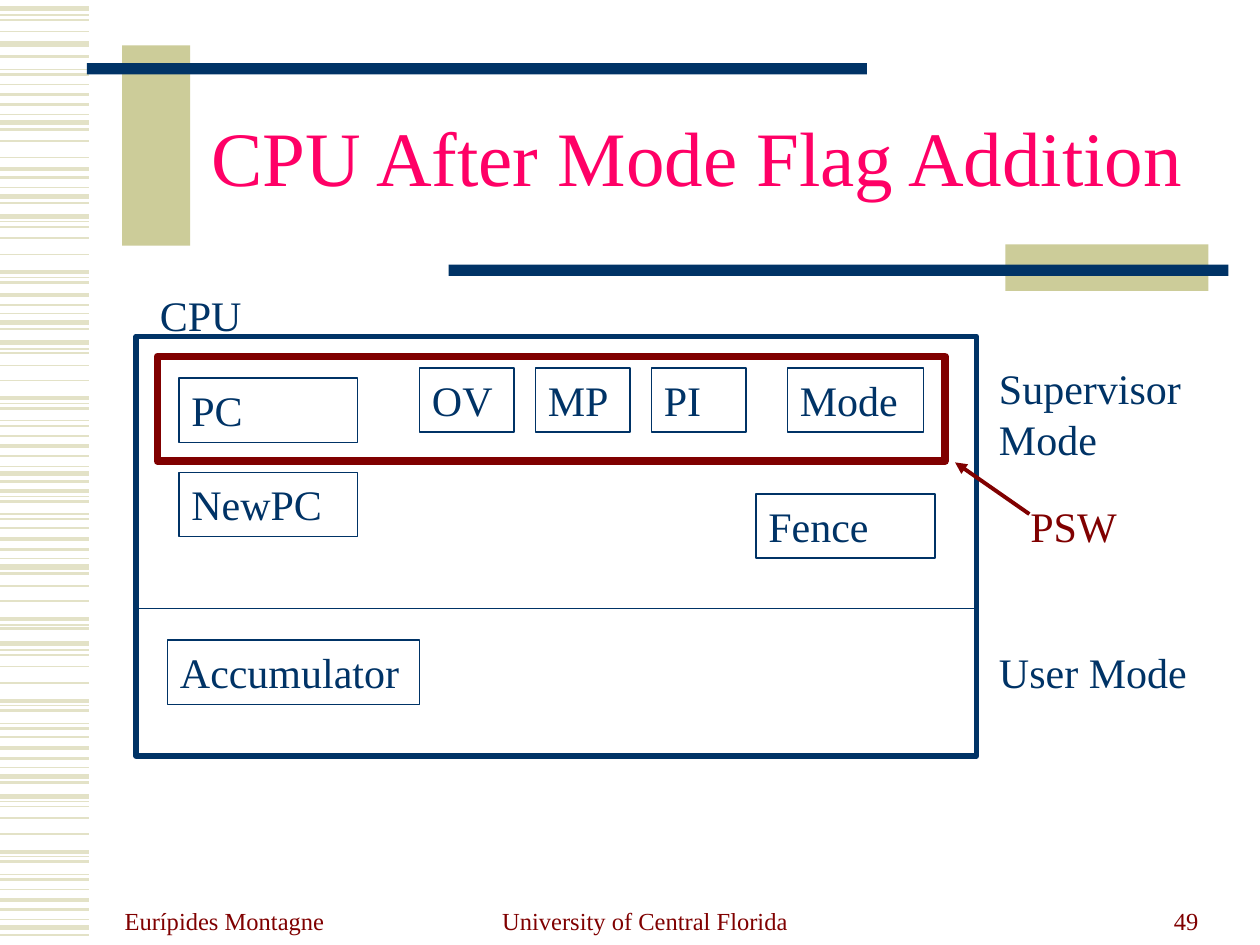
from lxml import etree
from pptx import Presentation
from pptx.dml.color import RGBColor
from pptx.enum.shapes import MSO_CONNECTOR, MSO_SHAPE
from pptx.enum.text import MSO_ANCHOR, MSO_AUTO_SIZE, PP_ALIGN
from pptx.oxml.ns import qn
from pptx.util import Pt

RECTANGLE = MSO_SHAPE.RECTANGLE
STRAIGHT = MSO_CONNECTOR.STRAIGHT
TOP, MIDDLE, BOTTOM = MSO_ANCHOR.TOP, MSO_ANCHOR.MIDDLE, MSO_ANCHOR.BOTTOM
LEFT, CENTER, RIGHT = PP_ALIGN.LEFT, PP_ALIGN.CENTER, PP_ALIGN.RIGHT
FIXED, GROW = MSO_AUTO_SIZE.NONE, MSO_AUTO_SIZE.SHAPE_TO_FIT_TEXT

EMU_PER_PX = 9144
FONT = "Times New Roman"
COLORS = {
    "navy": "003366",
    "maroon": "800000",
    "pink": "FF0066",
    "khaki": "CCCC99",
    "stripe": "E3E2C7",
}

STRIPES = {
    0.75: [12, 55, 91, 149, 176, 220, 249, 277, 320, 334, 370, 394, 408, 443,
           496, 516, 560, 574, 609, 636, 680, 694, 730],
    1: [16, 25, 67, 112, 125, 180, 189, 202, 280, 290, 302, 346, 419, 465,
        477, 520, 529, 542, 585, 640, 649, 662, 706],
    1.5: [45, 59, 83, 103, 141, 161, 224, 242, 261, 324, 338, 362, 382, 398,
          412, 436, 455, 499, 564, 578, 602, 621, 684, 698, 722, 742],
    2.25: [75, 134, 216, 234, 316, 354, 390, 428, 491, 556, 594, 676, 714],
    3: [7, 35, 97, 156, 172, 256, 272, 376, 450, 511, 616, 632, 736],
}
BARS = [
    (97, 36, 54, 159, "khaki"),
    (69, 50, 619, 9, "navy"),
    (798, 194, 161, 37, "khaki"),
    (356, 210, 619, 9, "navy"),
]
FOOTERS = [
    ("Eurípides Montagne", 89, 208, LEFT),
    ("University of Central Florida", 343, 338, CENTER),
    ("49", 721, 240, RIGHT),
]
FLAGS = ["OV", "MP", "PI"]
REGISTERS = [
    ("PC", 142, 300, 142),
    ("Mode", 625, 292, 108),
    ("NewPC", 142, 375, 142),
    ("Fence", 600, 392, 142),
    ("Accumulator", 133, 508, 200),
] + [(flag, 333 + 92 * index, 292, 75) for index, flag in enumerate(FLAGS)]
LABELS = [
    ("CPU", 117, 225, 175, 50, "navy"),
    ("Supervisor Mode", 783, 283, 175, 90, "navy"),
    ("User Mode", 783, 508, 175, 50, "navy"),
    ("PSW", 808, 392, 150, 50, "maroon"),
]


def emu(*lengths):
    """Turn px lengths into EMU."""
    return [length * EMU_PER_PX for length in lengths]


def rgb(name):
    """Look up a named colour."""
    return RGBColor.from_string(COLORS[name])


class SlideBuilder:
    """Draws styled elements on the current slide."""

    def __init__(self, page):
        """Keep the page to draw on."""
        self.page = page

    def set_text(self, shape, text, size, color, align=LEFT, anchor=TOP, fit=FIXED):
        """Put one styled paragraph into a shape."""
        frame = shape.text_frame
        frame.text = text
        frame.word_wrap = True
        frame.auto_size = fit
        frame.vertical_anchor = anchor
        para = frame.paragraphs[0]
        para.alignment = align
        for span in para.runs:
            span.font.name = FONT
            span.font.size = Pt(size)
            span.font.color.rgb = rgb(color)
        return para

    def title(self, text, left, top, width, height):
        """Place and fill the title placeholder."""
        box = self.page.shapes.title
        box.left, box.top, box.width, box.height = emu(left, top, width, height)
        para = self.set_text(box, text, 44, "pink", CENTER, MIDDLE)
        para.line_spacing = 0.85

    def label(self, text, left, top, width, height, color, size=24, **layout):
        """Add a text box."""
        box = self.page.shapes.add_textbox(*emu(left, top, width, height))
        self.set_text(box, text, size, color, **layout)

    def bar(self, left, top, width, height, color):
        """Add a filled rectangle without outline."""
        bar = self.page.shapes.add_shape(RECTANGLE, *emu(left, top, width, height))
        bar.shadow.inherit = False
        bar.fill.solid()
        bar.fill.fore_color.rgb = rgb(color)
        bar.line.fill.background()

    def frame(self, left, top, width, height, color, weight):
        """Add an unfilled outlined rectangle."""
        frame = self.page.shapes.add_shape(RECTANGLE, *emu(left, top, width, height))
        frame.shadow.inherit = False
        frame.fill.background()
        frame.line.color.rgb = rgb(color)
        frame.line.width = Pt(weight)
        return frame

    def register(self, text, left, top, width):
        """Add a thin frame holding a register name."""
        box = self.frame(left, top, width, 51, "navy", 0.75)
        self.set_text(box, text, 24, "navy", fit=GROW)

    def line(self, start_x, start_y, end_x, end_y, color, weight, arrow=False):
        """Add a straight line with an optional arrowhead at its end."""
        line = self.page.shapes.add_connector(
            STRAIGHT, *emu(start_x, start_y, end_x, end_y))
        line.line.color.rgb = rgb(color)
        line.line.width = Pt(weight)
        properties = line._element.spPr
        if arrow:
            outline = properties.get_or_add_ln()
            etree.SubElement(outline, qn("a:tailEnd"), type="triangle")
        etree.SubElement(properties, qn("a:effectLst"))


def main():
    """Build and save the slide."""
    deck = Presentation()
    deck.slide_width, deck.slide_height = emu(1000, 750)
    builder = SlideBuilder(deck.slides.add_slide(deck.slide_layouts[5]))

    for weight, heights in STRIPES.items():
        for y in heights:
            builder.line(0, y, 71, y, "stripe", weight)
    for bar in BARS:
        builder.bar(*bar)

    builder.title("CPU After Mode Flag Addition", 150, 67, 807, 125)
    for text, left, width, align in FOOTERS:
        builder.label(text, left, 697, width, 50, "maroon", 14,
                      align=align, anchor=BOTTOM)

    builder.frame(108, 267, 667, 333, "navy", 3)
    builder.line(108, 483, 775, 483, "navy", 0.75)
    for register in REGISTERS:
        builder.register(*register)
    for label in LABELS:
        builder.label(*label, fit=GROW)
    builder.frame(125, 283, 625, 83, "maroon", 4.5)
    builder.line(817, 408, 758, 367, "maroon", 2.25, arrow=True)

    deck.save("out.pptx")


if __name__ == "__main__":
    main()
